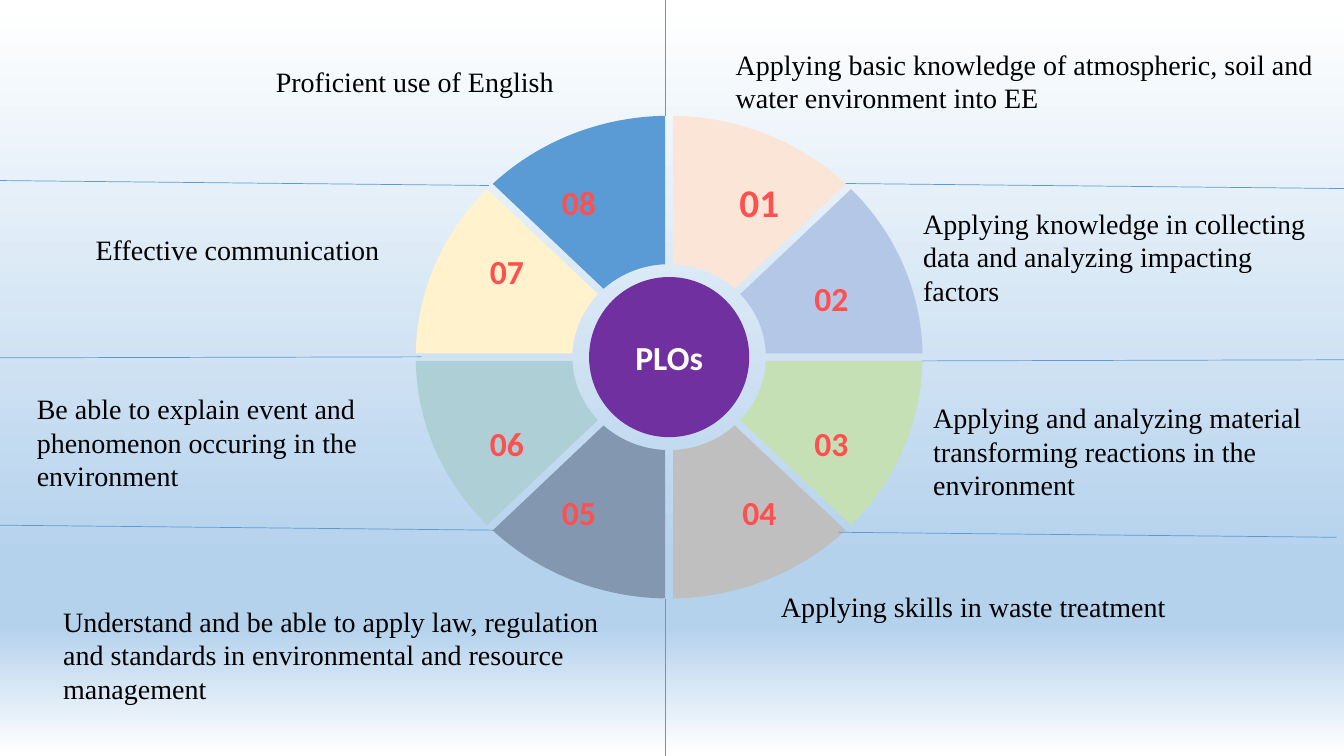
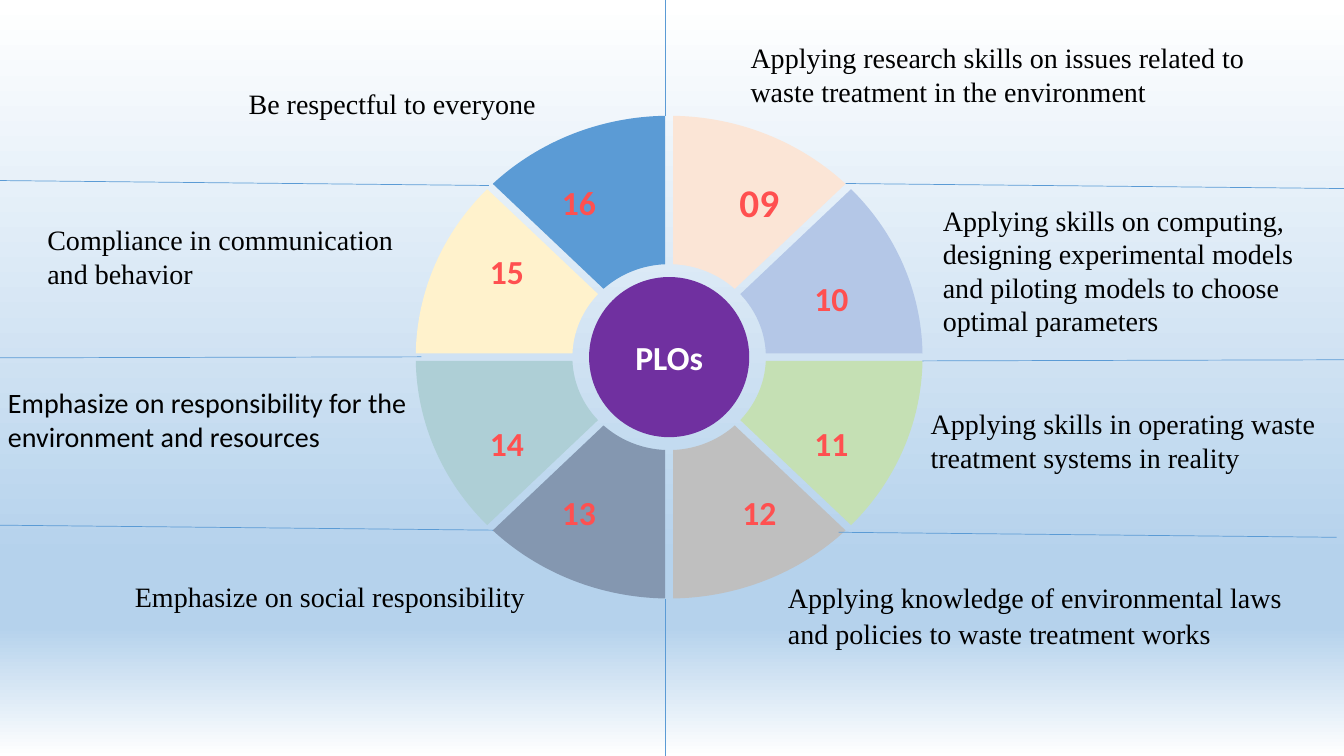
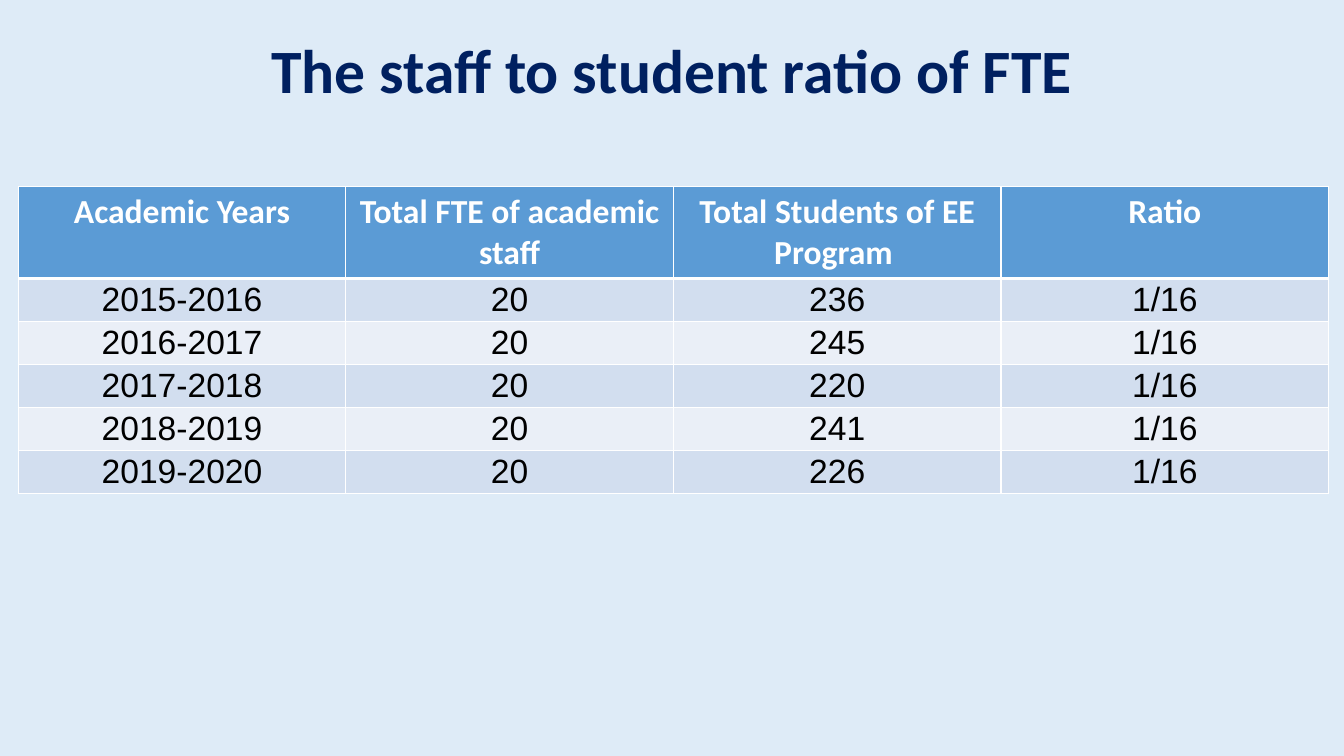
from dataclasses import dataclass
from math import asin, cos, radians, sin, tan

from lxml import etree
from pptx import Presentation
from pptx.dml.color import RGBColor
from pptx.enum.shapes import MSO_CONNECTOR, MSO_SHAPE
from pptx.enum.text import MSO_ANCHOR, PP_ALIGN
from pptx.oxml.ns import qn
from pptx.util import Pt

STRAIGHT, OVAL = MSO_CONNECTOR.STRAIGHT, MSO_SHAPE.OVAL
MIDDLE, BOTTOM = MSO_ANCHOR.MIDDLE, MSO_ANCHOR.BOTTOM
LEFT, CENTER = PP_ALIGN.LEFT, PP_ALIGN.CENTER
TITLE_ONLY, BLANK = 5, 6


@dataclass(frozen=True)
class Theme:
    heading_font: str = "Calibri"
    text_font: str = "Times New Roman"
    table_font: str = "Arial"
    title_size: int = 44
    first_number_size: int = 28
    label_size: int = 24
    text_size: int = 20
    accent: str = "5B9BD5"
    white: str = "FFFFFF"
    black: str = "000000"
    title: str = "002060"
    number: str = "FF5050"
    hub: str = "7030A0"
    page: str = "DEEBF7"
    sectors: tuple = ("FBE5D6", "B4C7E7", "C5E0B4", "BFBFBF",
                      "8497B0", "AECFD6", "FFF2CC", "5B9BD5")
    bands: tuple = ("D2DEEF", "EAEFF7")
    gradient: tuple = ((0, "FFFFFF"), (74, "B5D2EC"), (83, "B5D2EC"), (100, "FFFFFF"))


THEME = Theme()
SLIDE_WIDTH, SLIDE_HEIGHT = 960, 540

# Outcomes clockwise from the top: left, top, width, lines, text, paragraph format
WHEELS = [
    [
        (518.4, 30.2, 431.3, 2, "Applying basic knowledge of atmospheric, soil and water environment into EE", {}),
        (652.3, 143.7, 297.4, 3, "Applying knowledge in collecting data and analyzing impacting factors", {}),
        (659.5, 282.5, 290.2, 3, "Applying and analyzing material transforming reactions in the environment", {}),
        (550.8, 417.6, 290.9, 1, "Applying skills in waste treatment", {}),
        (38, 428, 402.5, 3, "Understand and be able to apply law, regulation and standards in "
                            "environmental and resource management", {}),
        (19.2, 276.2, 275, 3, "Be able to explain event and phenomenon occuring in the environment", {}),
        (61.2, 162.4, 218.2, 1, "Effective communication", {}),
        (189.9, 42.5, 214.6, 1, "Proficient use of English", {}),
    ],
    [
        (529, 25.6, 395.3, 2, "Applying research skills on issues related to waste treatment in the environment", {}),
        (666.4, 141.5, 285.8, 4, "Applying skills on computing, designing experimental models and piloting "
                                 "models to choose optimal parameters", {}),
        (657.6, 287, 297.4, 2, "Applying skills in operating waste treatment systems in reality", {}),
        (519.8, 409.4, 413.3, 2, "Applying knowledge of environmental laws and policies to waste treatment works",
         {"spacing": 1.07, "indent": 36}),
        (89.3, 410.4, 295.2, 1, "Emphasize on social responsibility", {}),
        (-1.4, 271.8, 306, 2, "Emphasize on responsibility for the environment and resources",
         {"font": THEME.heading_font}),
        (26.7, 155.5, 289.4, 2, "Compliance in communication and behavior", {}),
        (170.5, 58.3, 221, 1, "Be respectful to everyone", {}),
    ],
]

HUB_LABEL = "PLOs"
HUB_DIAMETER = 114.4
WHEEL_CENTER = (478, 255.1)
OUTER_RADII, INNER_RADII = (181, 172.4), (69.1, 66.4)
HALF_GAP = 2.8
DIVIDERS = [
    (604.1, 131.1, 960, 134.7), (658.8, 257.8, 960, 257),
    (-4.3, 375.1, 352.1, 378.7), (599, 380.2, 954.7, 383.8),
    (0, 255.6, 301, 254.9), (-6.5, 128.9, 349.2, 132.5),
    (475.2, 82.8, 475.2, 0), (475.2, 540, 475.2, 427.7),
]

RATIO_TITLE = "The staff to student ratio of FTE"
RATIO_ROWS = [
    ("Academic Years", "Total FTE of academic staff", "Total Students of EE Program ", "Ratio"),
    ("2015-2016", "20", "236", "1/16"),
    ("2016-2017", "20", "245", "1/16"),
    ("2017-2018", "20", "220", "1/16"),
    ("2018-2019", "20", "241", "1/16"),
    ("2019-2020", "20", "226", "1/16"),
]
TABLE_LEFT, TABLE_TOP, TABLE_WIDTH = 13, 133.2, 936
HEADER_HEIGHT, ROW_HEIGHT = 53.3, 30.7


def rgb(value):
    return RGBColor.from_string(value)


def set_format(target, **values):
    for name, value in values.items():
        setattr(target, name, value)


def write(frame, text, size, color, font=THEME.heading_font, bold=False, align=CENTER,
          spacing=None, indent=0):
    frame.text = text
    paragraph = frame.paragraphs[0]
    set_format(paragraph, alignment=align, line_spacing=spacing)
    set_format(paragraph.font, name=font, size=Pt(size), bold=bold)
    paragraph.font.color.rgb = rgb(color)
    if indent:
        paragraph._p.get_or_add_pPr().set("marL", str(Pt(indent)))


def paint(shape, color):
    shape.shadow.inherit = False
    shape.fill.solid()
    shape.fill.fore_color.rgb = rgb(color)
    shape.line.fill.background()


def paint_gradient(slide):
    fill = slide.background.fill
    fill.gradient()
    fill.gradient_angle = 270
    stops = slide.element.find(".//" + qn("a:gsLst"))
    for stop in list(stops):
        stops.remove(stop)
    for percent, color in THEME.gradient:
        stop = etree.SubElement(stops, qn("a:gs"), pos=str(percent * 1000))
        etree.SubElement(stop, qn("a:srgbClr"), val=color)


def arc(radii, index):
    """Bezier points (start, two controls, end) of one eighth, trimmed by half a gap at both ends."""
    margin = asin(HALF_GAP / radii[0])
    first = radians(90 - 45 * index) - margin
    last = radians(45 - 45 * index) + margin
    pull = 4 / 3 * tan((last - first) / 4)
    units = [
        (cos(first), sin(first)),
        (cos(first) - pull * sin(first), sin(first) + pull * cos(first)),
        (cos(last) + pull * sin(last), sin(last) - pull * cos(last)),
        (cos(last), sin(last)),
    ]
    return [(Pt(WHEEL_CENTER[0] + radii[0] * x), Pt(WHEEL_CENTER[1] - radii[1] * y)) for x, y in units]


def bend(lines):
    """Turns three straight segments into one cubic curve through the same points."""
    curve = etree.Element(qn("a:cubicBezTo"))
    lines[0].addprevious(curve)
    for line in lines:
        curve.append(line[0])
        line.getparent().remove(line)


def add_sector(slide, index, number):
    points = arc(OUTER_RADII, index) + arc(INNER_RADII, index)[::-1]
    builder = slide.shapes.build_freeform(*points[0], scale=1.0)
    builder.add_line_segments(points[1:], close=True)
    sector = builder.convert_to_shape()
    lines = list(sector.element.iter(qn("a:lnTo")))
    bend(lines[:3])
    bend(lines[4:7])
    paint(sector, THEME.sectors[index])
    size = THEME.first_number_size if index == 0 else THEME.label_size
    write(sector.text_frame, f"{number:02}", size, THEME.number, bold=True)
    sector.text_frame.vertical_anchor = MIDDLE
    if index == 1:
        set_format(sector.text_frame, vertical_anchor=BOTTOM, margin_bottom=Pt(25))


def add_hub(slide):
    left, top = (center - HUB_DIAMETER / 2 for center in WHEEL_CENTER)
    hub = slide.shapes.add_shape(OVAL, Pt(left), Pt(top), Pt(HUB_DIAMETER), Pt(HUB_DIAMETER))
    paint(hub, THEME.hub)
    write(hub.text_frame, HUB_LABEL, THEME.label_size, THEME.white, bold=True)
    hub.text_frame.vertical_anchor = MIDDLE


def add_divider(slide, ends):
    divider = slide.shapes.add_connector(STRAIGHT, *map(Pt, ends))
    divider.line.color.rgb = rgb(THEME.accent)
    divider.line.width = Pt(0.5)
    etree.SubElement(divider.element.spPr, qn("a:effectLst"))


def add_outcome(slide, left, top, width, lines, text, paragraph_format):
    height = 24 * lines + 7.6
    box = slide.shapes.add_textbox(Pt(left), Pt(top), Pt(width), Pt(height))
    box.text_frame.word_wrap = lines > 1
    values = {"font": THEME.text_font, "align": LEFT, **paragraph_format}
    write(box.text_frame, text, THEME.text_size, THEME.black, **values)


def add_wheel_slide(presentation, outcomes, first_number):
    slide = presentation.slides.add_slide(presentation.slide_layouts[BLANK])
    paint_gradient(slide)
    for index in range(len(outcomes)):
        add_sector(slide, index, first_number + index)
    add_hub(slide)
    for ends in DIVIDERS:
        add_divider(slide, ends)
    for outcome in outcomes:
        add_outcome(slide, *outcome)


def add_borders(cell, top, bottom):
    properties = cell._tc.get_or_add_tcPr()
    for side, width in (("L", 1), ("R", 1), ("T", top), ("B", bottom)):
        line = etree.SubElement(properties, qn(f"a:ln{side}"), w=str(Pt(width)))
        fill = etree.SubElement(line, qn("a:solidFill"))
        etree.SubElement(fill, qn("a:srgbClr"), val=THEME.white)


def format_cell(cell, text, row_index):
    header = row_index == 0
    add_borders(cell, top=3 if row_index == 1 else 1, bottom=3 if header else 1)
    cell.fill.solid()
    cell.fill.fore_color.rgb = rgb(THEME.accent if header else THEME.bands[(row_index - 1) % 2])
    if header:
        write(cell.text_frame, text, THEME.label_size, THEME.white, bold=True)
    else:
        set_format(cell, margin_left=Pt(5), margin_right=Pt(5), margin_top=0, margin_bottom=0)
        write(cell.text_frame, text, THEME.label_size, THEME.black, THEME.table_font, spacing=1.07)


def add_ratio_slide(presentation):
    slide = presentation.slides.add_slide(presentation.slide_layouts[TITLE_ONLY])
    slide.background.fill.solid()
    slide.background.fill.fore_color.rgb = rgb(THEME.page)
    title = slide.shapes.title
    set_format(title, left=Pt(66), top=Pt(0), width=Pt(828), height=Pt(104.4))
    write(title.text_frame, RATIO_TITLE, THEME.title_size, THEME.title, bold=True, spacing=0.9)
    title.text_frame.vertical_anchor = MIDDLE

    row_count, column_count = len(RATIO_ROWS), len(RATIO_ROWS[0])
    height = HEADER_HEIGHT + ROW_HEIGHT * (row_count - 1)
    table = slide.shapes.add_table(row_count, column_count, Pt(TABLE_LEFT), Pt(TABLE_TOP),
                                   Pt(TABLE_WIDTH), Pt(height)).table
    for row_index, values in enumerate(RATIO_ROWS):
        table.rows[row_index].height = Pt(ROW_HEIGHT if row_index else HEADER_HEIGHT)
        for column_index, value in enumerate(values):
            format_cell(table.cell(row_index, column_index), value, row_index)


def main():
    presentation = Presentation()
    set_format(presentation, slide_width=Pt(SLIDE_WIDTH), slide_height=Pt(SLIDE_HEIGHT))
    first_number = 1
    for outcomes in WHEELS:
        add_wheel_slide(presentation, outcomes, first_number)
        first_number += len(outcomes)
    add_ratio_slide(presentation)
    presentation.save("out.pptx")


if __name__ == "__main__":
    main()
